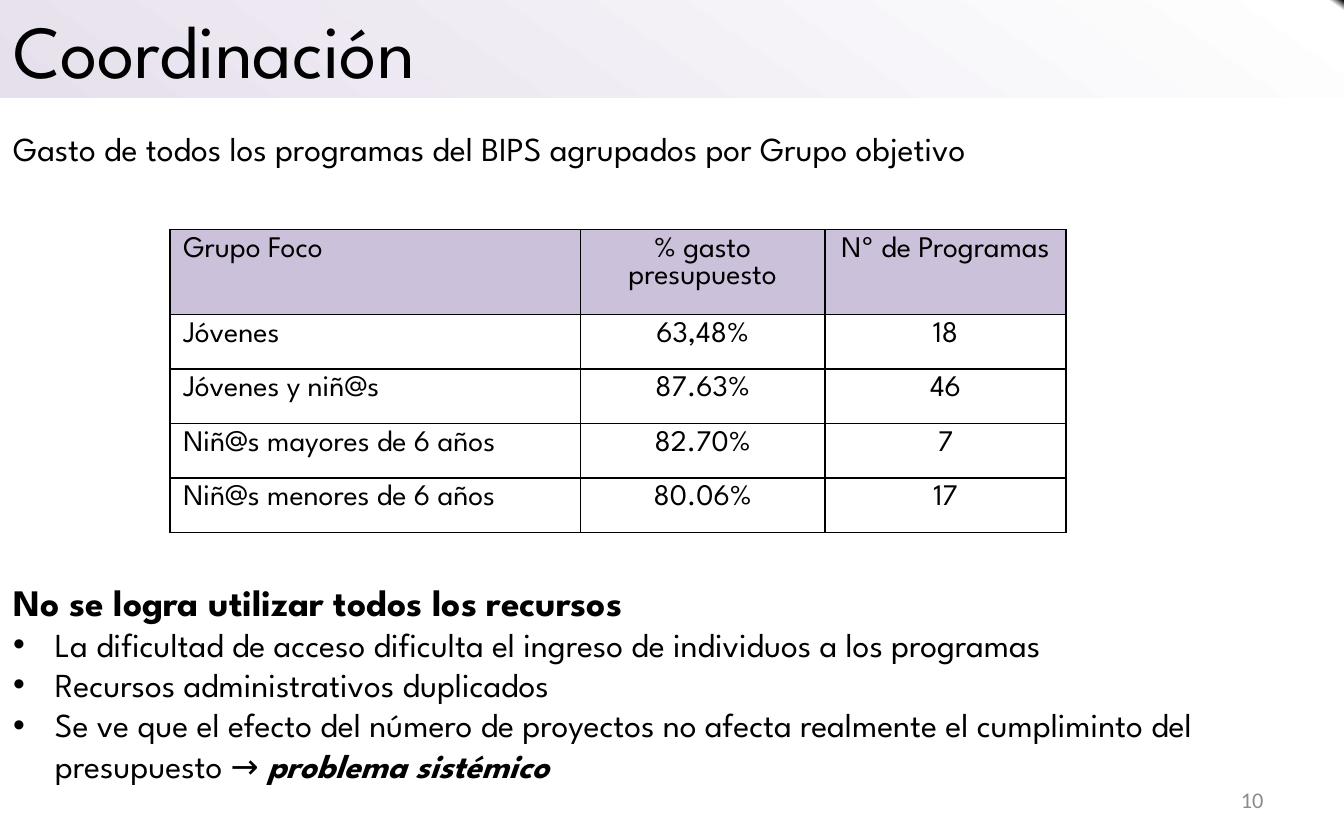
from lxml import etree
from pptx import Presentation
from pptx.dml.color import RGBColor
from pptx.enum.shapes import MSO_SHAPE
from pptx.enum.text import MSO_ANCHOR, PP_ALIGN
from pptx.oxml.ns import qn
from pptx.util import Cm, Pt

RECT = MSO_SHAPE.RECTANGLE
MIDDLE = MSO_ANCHOR.MIDDLE
LEFT, CENTER, RIGHT = PP_ALIGN.LEFT, PP_ALIGN.CENTER, PP_ALIGN.RIGHT

THEME = {
    "font": "League Spartan", "number_font": "Calibri",
    "ink": "000000", "muted": "8C8C8C", "header": "CCC1DA",
    "band": [(0, "E6E0EC"), (99, "FFFFFF"), (100, "000000"), (100, "FFFFFF")],
    "title": 40, "heading": 20, "body": 18, "cell": 16, "number": 12,
}
WIDTH, HEIGHT = 25.4, 15.88
INDENT = 0.79

TITLE = "Coordinación"
SUBTITLE = "Gasto de todos los programas del BIPS agrupados por Grupo objetivo"
PAGE = "10"
ROWS = [
    ("Grupo Foco", "% gasto presupuesto", "Nº de Programas"),
    ("Jóvenes", "63,48%", "18"),
    ("Jóvenes y niñ@s", "87.63%", "46"),
    ("Niñ@s mayores de 6 años", "82.70%", "7"),
    ("Niñ@s menores de 6 años", "80.06%", "17"),
]
COL_WIDTHS = [7.76, 4.62, 4.56]
ROW_HEIGHTS = [1.6] + [1.03] * (len(ROWS) - 1)
HEADING = "No se logra utilizar todos los recursos"
# Each bullet is its plain text and its emphasised ending.
BULLETS = [
    ("La dificultad de acceso dificulta el ingreso de individuos a los programas", ""),
    ("Recursos administrativos duplicados", ""),
    ("Se ve que el efecto del número de proyectos no afecta realmente "
     "el cumpliminto del presupuesto → ", "problema sistémico"),
]


def format_paragraph(p, size, align=LEFT, color="ink", font="font"):
    p.alignment = align
    for r in p.runs:
        r.font.name = THEME[font]
        r.font.size = Pt(THEME[size])
        r.font.color.rgb = RGBColor.from_string(THEME[color])


def add_text(slide, left, top, width, height, text, size, **style):
    tf = slide.shapes.add_textbox(Cm(left), Cm(top), Cm(width), Cm(height)).text_frame
    tf.word_wrap = True
    tf.text = text
    format_paragraph(tf.paragraphs[0], size, **style)
    return tf


def add_bullet(tf, text, ending):
    p = tf.add_paragraph()
    p.text = text
    if ending:
        r = p.add_run()
        r.text = ending
        r.font.bold = r.font.italic = True
    format_paragraph(p, "body")
    pPr = p._p.get_or_add_pPr()
    pPr.set("marL", str(Cm(INDENT)))
    pPr.set("indent", str(-Cm(INDENT)))
    etree.SubElement(pPr, qn("a:buFont"), typeface="Arial")
    etree.SubElement(pPr, qn("a:buChar"), char="•")


def add_solid(parent, color):
    fill = etree.SubElement(parent, qn("a:solidFill"))
    etree.SubElement(fill, qn("a:srgbClr"), val=color)


def set_borders(cell):
    tcPr = cell._tc.get_or_add_tcPr()
    for i, side in enumerate(("lnL", "lnR", "lnT", "lnB")):
        ln = etree.Element(qn("a:" + side), w=str(Pt(1)))
        add_solid(ln, THEME["ink"])
        tcPr.insert(i, ln)


def add_band(slide):
    s = slide.shapes.add_shape(RECT, 0, 0, Cm(WIDTH), Cm(1.85))
    s.shadow.inherit = False
    s.line.fill.background()
    s.fill.gradient()
    s.fill.gradient_angle = 55
    stops = s._element.spPr.find(".//" + qn("a:gsLst"))
    for stop in list(stops):
        stops.remove(stop)
    for position, color in THEME["band"]:
        stop = etree.SubElement(stops, qn("a:gs"), pos=str(position * 1000))
        etree.SubElement(stop, qn("a:srgbClr"), val=color)
    tf = s.text_frame
    tf.vertical_anchor = MIDDLE
    tf.text = TITLE
    format_paragraph(tf.paragraphs[0], "title")


def add_spending_table(slide):
    table = slide.shapes.add_table(
        len(ROWS), len(COL_WIDTHS), Cm(3.21), Cm(4.34),
        Cm(sum(COL_WIDTHS)), Cm(sum(ROW_HEIGHTS))).table
    for column, width in zip(table.columns, COL_WIDTHS):
        column.width = Cm(width)
    for i, values in enumerate(ROWS):
        table.rows[i].height = Cm(ROW_HEIGHTS[i])
        for j, value in enumerate(values):
            cell = table.cell(i, j)
            cell.text = value
            p = cell.text_frame.paragraphs[0]
            format_paragraph(p, "cell", CENTER if j else LEFT)
            for r in p.runs:
                r.font.bold = False
            if i == 0:
                cell.fill.solid()
                cell.fill.fore_color.rgb = RGBColor.from_string(THEME["header"])
            else:
                cell.fill.background()
            set_borders(cell)


def main():
    prs = Presentation()
    prs.slide_width, prs.slide_height = Cm(WIDTH), Cm(HEIGHT)
    slide = prs.slides.add_slide(prs.slide_layouts[6])
    add_band(slide)
    number = add_text(slide, 18.2, 14.7, 5.93, 0.85, PAGE, "number",
                      align=RIGHT, color="muted", font="number_font")
    number.vertical_anchor = MIDDLE
    notes = add_text(slide, 0, 10.82, WIDTH, 4.19, HEADING, "heading")
    notes.paragraphs[0].runs[0].font.bold = True
    for text, ending in BULLETS:
        add_bullet(notes, text, ending)
    add_spending_table(slide)
    add_text(slide, 0, 2.29, WIDTH, 1.02, SUBTITLE, "body")
    prs.save("out.pptx")


if __name__ == "__main__":
    main()
